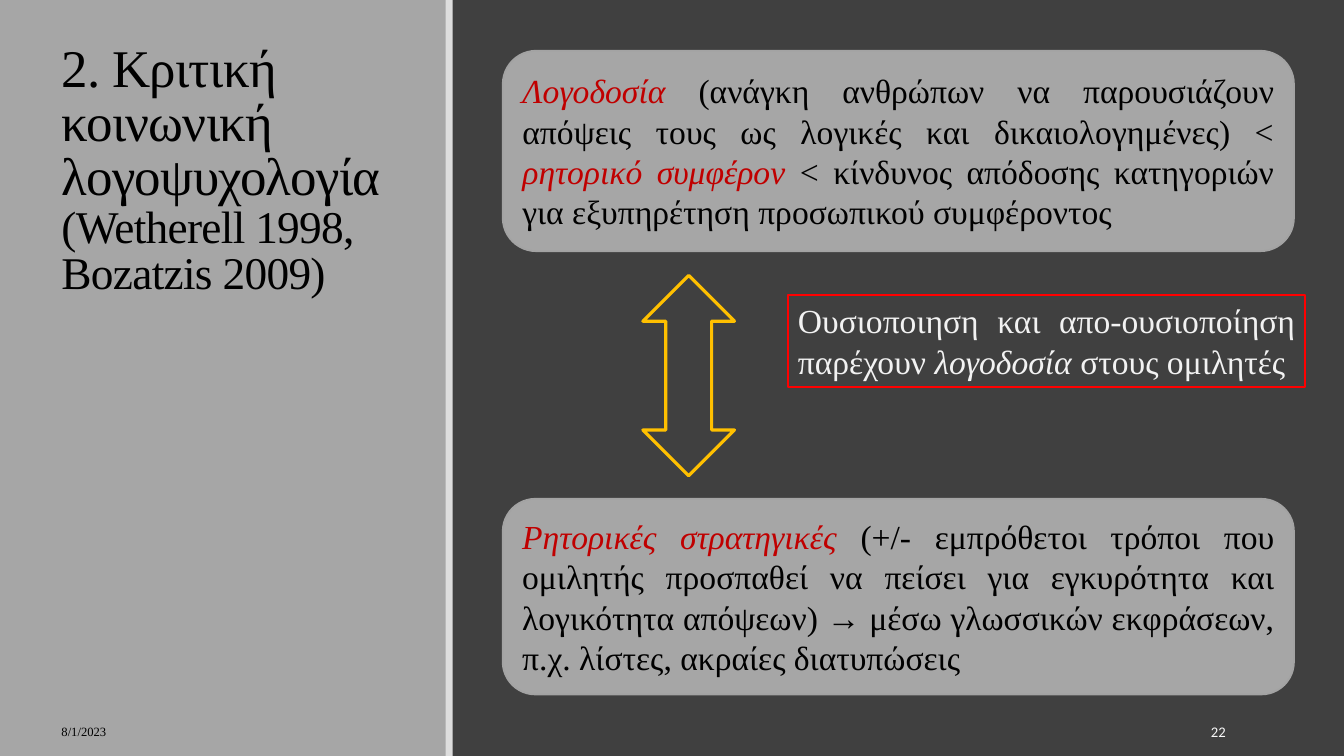
from dataclasses import dataclass

from pptx import Presentation
from pptx.dml.color import RGBColor as Rgb
from pptx.enum.shapes import MSO_SHAPE as Kind
from pptx.enum.text import MSO_ANCHOR as Anchor, PP_ALIGN as Align
from pptx.util import Cm, Pt


@dataclass(frozen=True)
class Theme:
    back: str = "404040"
    panel: str = "A6A6A6"
    strip: str = "DDDDDD"
    edge: str = "A3A3A3"
    dark: str = "000000"
    light: str = "F2F2F2"
    pale: str = "F8F8F8"
    key: str = "C00000"
    arrow: str = "FFC000"
    frame: str = "FF0000"
    serif: str = "Times New Roman"
    sans: str = "Calibri"
    title: float = 37.8
    cite: float = 32.4
    body: float = 24
    date: float = 9
    page: float = 10.5


THEME = Theme()


def apply(target, values):
    for name, value in values.items():
        setattr(target, name, value)


def style(size, color, face=THEME.serif, italic=False):
    return {"size": Pt(size), "name": face, "italic": italic, "color": color}


def write(shape, runs, anchor, align=Align.LEFT, space=None, track=None):
    frame = shape.text_frame
    apply(frame, {"word_wrap": True, "vertical_anchor": anchor})
    para = frame.paragraphs[0]
    apply(para, {"alignment": align, "line_spacing": space})
    for text, look in runs:
        run = para.add_run()
        run.text = text
        apply(run.font, {k: v for k, v in look.items() if k != "color"})
        run.font.color.rgb = Rgb.from_string(look["color"])
        if track is not None:
            run.font._element.set("spc", str(track))


def draw(slide, kind, box, fill=None, line=None, width=0):
    shape = slide.shapes.add_shape(kind, *map(Cm, box))
    shape.shadow.inherit = False
    if fill:
        shape.fill.solid()
        shape.fill.fore_color.rgb = Rgb.from_string(fill)
    else:
        shape.fill.background()
    if line:
        shape.line.color.rgb = Rgb.from_string(line)
        shape.line.width = Pt(width)
    else:
        shape.line.fill.background()
    return shape


def label(slide, box, runs, anchor=Anchor.MIDDLE, **rest):
    write(slide.shapes.add_textbox(*map(Cm, box)), runs, anchor, **rest)


def card(slide, top, height, runs):
    shape = draw(slide, Kind.ROUNDED_RECTANGLE, (12.67, top, 19.94, height),
                 THEME.panel, THEME.edge, 1.25)
    write(shape, runs, Anchor.MIDDLE, Align.JUSTIFY)


def main():
    deck = Presentation()
    apply(deck, {"slide_width": Cm(33.87), "slide_height": Cm(19.05)})
    slide = deck.slides.add_slide(deck.slide_layouts[6])
    slide.background.fill.solid()
    slide.background.fill.fore_color.rgb = Rgb.from_string(THEME.back)

    plain = style(THEME.body, THEME.dark)
    key = style(THEME.body, THEME.key, italic=True)
    note = style(THEME.body, THEME.light)

    draw(slide, Kind.RECTANGLE, (0, 0, 11.25, 19.05), THEME.panel)
    draw(slide, Kind.RECTANGLE, (11.23, 0, 0.18, 19.05), THEME.strip)

    label(slide, (1.3, 1.3, 8.89, 6.35), [
        ("2. Κριτική κοινωνική λογοψυχολογία ", style(THEME.title, THEME.dark)),
        ("(Wetherell 1998, Bozatzis 2009)", style(THEME.cite, THEME.dark)),
    ], Anchor.BOTTOM, space=0.85, track=-50)
    label(slide, (1.3, 17.93, 7.26, 1.02),
          [("8/1/2023", style(THEME.date, THEME.dark))])
    label(slide, (27.51, 17.93, 3.63, 1.02),
          [("22", style(THEME.page, THEME.pale, THEME.sans))],
          align=Align.RIGHT)

    card(slide, 1.28, 5.05, [
        ("Λογοδοσία", key),
        (" (ανάγκη ανθρώπων να παρουσιάζουν απόψεις τους ως λογικές και "
         "δικαιολογημένες) < ", plain),
        ("ρητορικό συμφέρον ", key),
        ("< κίνδυνος απόδοσης κατηγοριών για εξυπηρέτηση προσωπικού "
         "συμφέροντος", plain),
    ])
    card(slide, 12.57, 4.93, [
        ("Ρητορικές στρατηγικές ", key),
        ("(+/- εμπρόθετοι τρόποι που ομιλητής προσπαθεί να πείσει για "
         "εγκυρότητα και λογικότητα απόψεων) → μέσω γλωσσικών εκφράσεων, "
         "π.χ. λίστες, ακραίες διατυπώσεις", plain),
    ])

    arrow = draw(slide, Kind.LEFT_RIGHT_ARROW, (14.83, 8.31, 5.05, 2.31),
                 line=THEME.arrow, width=2.25)
    arrow.rotation = 90

    claim = draw(slide, Kind.RECTANGLE, (19.86, 7.44, 13.03, 2.31),
                 line=THEME.frame, width=1.5)
    write(claim, [
        ("Ουσιοποιηση και απο-ουσιοποίηση παρέχουν ", note),
        ("λογοδοσία", {**note, "italic": True}),
        (" στους ομιλητές", note),
    ], Anchor.TOP, Align.JUSTIFY)

    deck.save("out.pptx")


if __name__ == "__main__":
    main()
